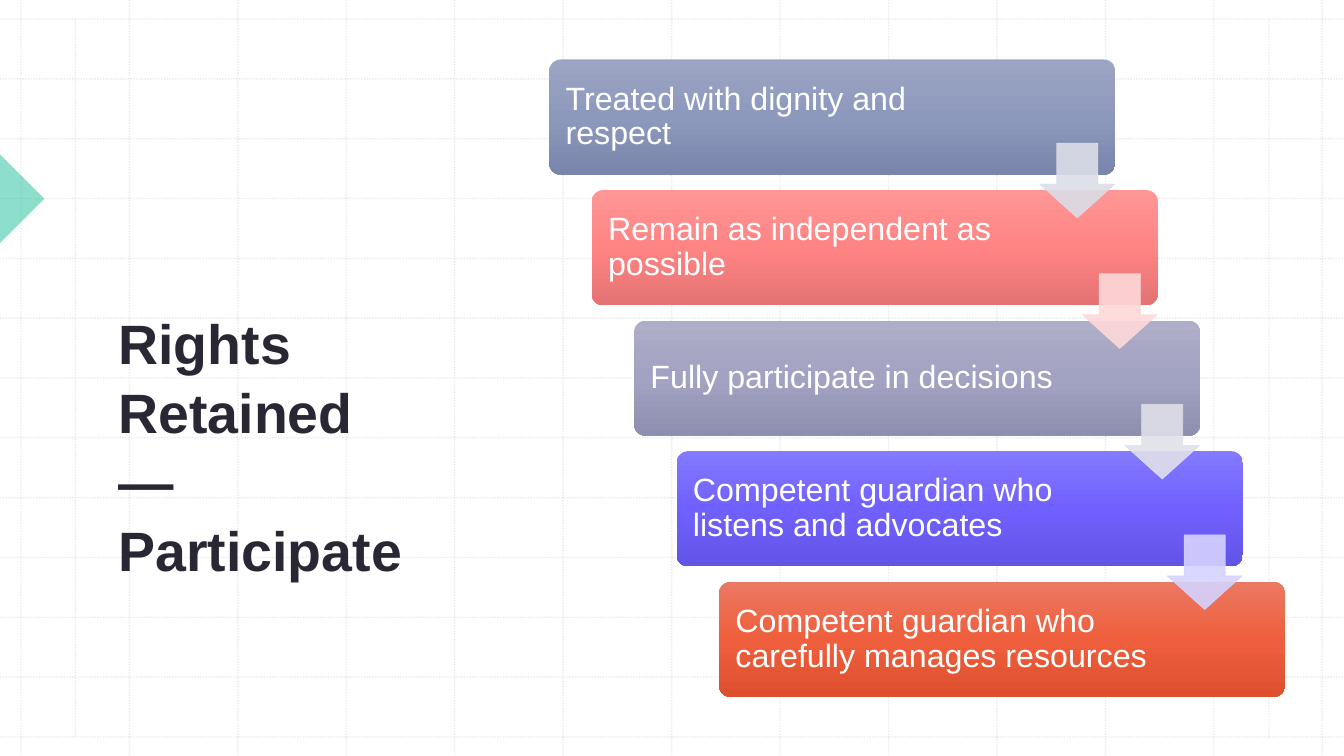
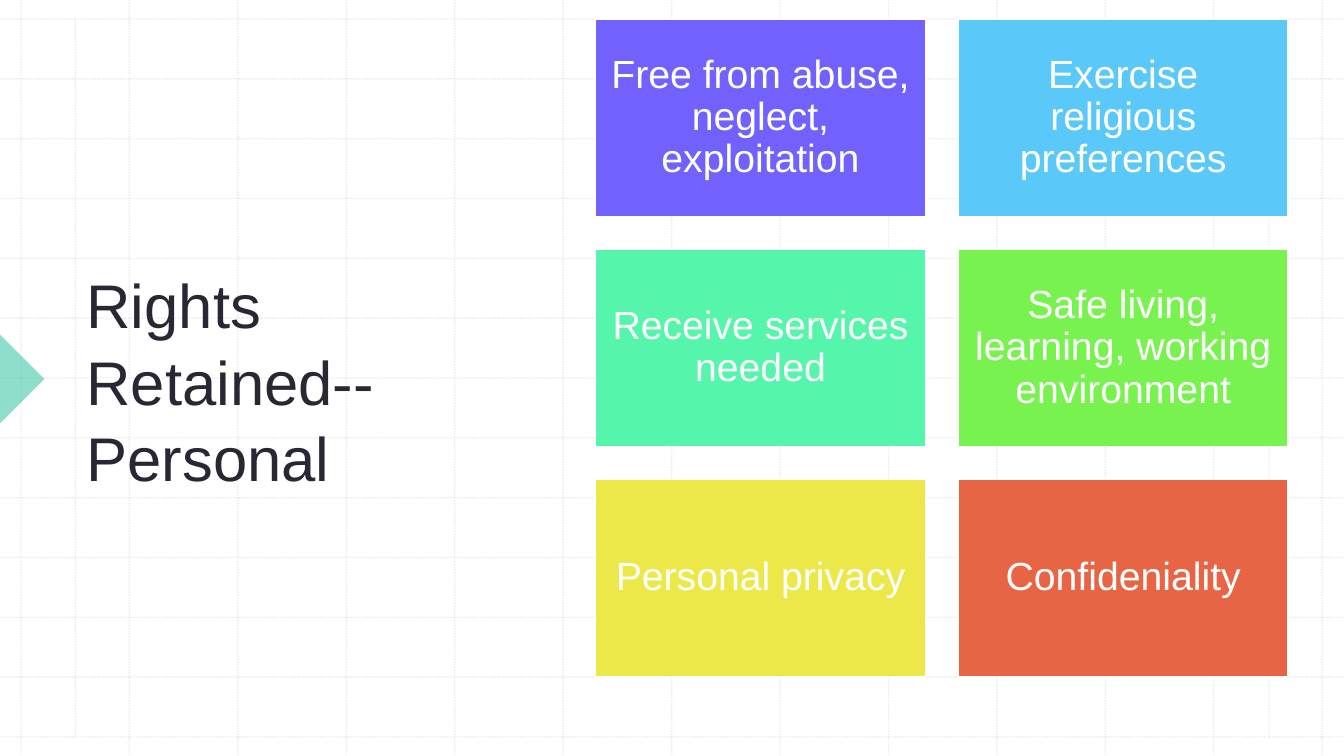
"""Build two slides on retained rights: a staircase of bars and a grid of tiles."""
from copy import deepcopy
from typing import NamedTuple

from pptx import Presentation
from pptx.dml.color import RGBColor as Rgb
from pptx.enum.dml import MSO_LINE as Dash
from pptx.enum.shapes import MSO_CONNECTOR as Wire, MSO_SHAPE as Kind
from pptx.enum.text import MSO_ANCHOR as Anchor, PP_ALIGN as Align
from pptx.oxml.ns import qn
from pptx.oxml.xmlchemy import OxmlElement as Node
from pptx.shapes.autoshape import Shape
from pptx.slide import Slide
from pptx.util import Cm, Pt

WIDE, HIGH = 33.87, 19.05
FONT = "Arial"
HUES = {
    "white": "FFFFFF", "ink": "2A2735", "grid": "BCBCBC", "mark": "1EBE9B",
    "violet": "7162FE", "sky": "5BC8FA", "mint": "55F6AB",
    "lime": "77F24F", "lemon": "ECE84A", "coral": "E76445",
}


class Box(NamedTuple):
    left: float
    top: float
    width: float
    height: float


class Step(NamedTuple):
    text: str
    shades: tuple[str, str, str]
    arrow: str = ""


class Tile(NamedTuple):
    text: str
    hue: str


STEPS = (
    Step("Treated with dignity and respect", ("9CA5C3", "8D98BD", "7A85AB"), "DBDEE7"),
    Step("Remain as independent as possible", ("FF9696", "FF8484", "E57373"), "FED9D9"),
    Step("Fully participate in decisions", ("AEAEC8", "A2A2C2", "8E8EAF"), "E0E0E9"),
    Step("Competent guardian who listens and advocates",
         ("8479FF", "7061FF", "6254E5"), "D5D3FF"),
    Step("Competent guardian who carefully manages resources",
         ("EB7862", "EF5F3D", "DE4F2D")),
)
TILES = (
    Tile("Free from abuse, neglect, exploitation", "violet"),
    Tile("Exercise religious preferences", "sky"),
    Tile("Receive services needed", "mint"),
    Tile("Safe living, learning, working environment", "lime"),
    Tile("Personal privacy", "lemon"),
    Tile("Confideniality", "coral"),
)


def rgb(code: str) -> Rgb:
    return Rgb.from_string(code)


def place(box: Box) -> tuple[Cm, ...]:
    return tuple(Cm(side) for side in box)


def fade(item, part: int) -> None:
    for hue in item._element.spPr.iter(qn("a:srgbClr")):
        alpha = Node("a:alpha")
        alpha.set("val", str(part * 1000))
        hue.append(alpha)


def add_form(slide: Slide, kind: Kind, box: Box, fill: str = "", edge: str = "",
             thick: float = 1) -> Shape:
    form = slide.shapes.add_shape(kind, *place(box))
    form.shadow.inherit = False
    if fill:
        form.fill.solid()
        form.fill.fore_color.rgb = rgb(fill)
    if edge:
        form.line.color.rgb = rgb(edge)
        form.line.width = Pt(thick)
    else:
        form.line.fill.background()
    return form


def shade(form: Shape, codes: tuple[str, str, str]) -> None:
    form.fill.gradient()
    form.fill.gradient_angle = 270
    stops = form._element.spPr.find(qn("a:gradFill")).find(qn("a:gsLst"))
    stops.append(deepcopy(stops[-1]))
    for spot, (stop, code) in enumerate(zip(form.fill.gradient_stops, codes)):
        stop.position = spot / 2
        stop.color.rgb = rgb(code)


def write(form: Shape, lines: tuple[str, ...], size: float, hue: str,
          align: Align = Align.LEFT, space: float = 0.9, bold: bool = False,
          pads: tuple[float, float] = (0.3, 0.3)) -> None:
    frame = form.text_frame
    frame.word_wrap = True
    frame.vertical_anchor = Anchor.MIDDLE
    frame.margin_left, frame.margin_right = map(Cm, pads)
    para = frame.paragraphs[0]
    para.alignment = align
    para.line_spacing = space
    for row, line in enumerate(lines):
        if row:
            para.add_line_break()
        run = para.add_run()
        run.text = line
        run.font.name = FONT
        run.font.size = Pt(size)
        run.font.bold = bold
        run.font.color.rgb = rgb(HUES[hue])


def add_rule(slide: Slide, x1: float, y1: float, x2: float, y2: float) -> None:
    rule = slide.shapes.add_connector(Wire.STRAIGHT, Cm(x1), Cm(y1), Cm(x2), Cm(y2))
    rule.line.color.rgb = rgb(HUES["grid"])
    rule.line.width = Pt(1)
    rule.line.dash_style = Dash.ROUND_DOT
    fade(rule, 30)
    rule._element.spPr.append(Node("a:effectLst"))


def add_base(deck: Presentation, mark: float) -> Slide:
    slide = deck.slides.add_slide(deck.slide_layouts[6])
    left, right, top, low, gaps = 0.53, 33.32, 0.48, 18.57, 12
    for step in range(gaps + 1):
        x = left + step * (right - left) / gaps
        y = top + step * (low - top) / gaps
        add_rule(slide, x, 0, x, HIGH)
        add_rule(slide, 0, y, WIDE, y)
    for x in (1.9, 31.98):
        add_rule(slide, x, top, x, low)
    wedge = add_form(slide, Kind.RIGHT_TRIANGLE, Box(-0.79, mark, 1.58, 1.58), HUES["mark"])
    wedge.rotation = 225
    fade(wedge, 50)
    return slide


def add_title(slide: Slide, box: Box, lines: tuple[str, ...], size: float,
              bold: bool = False) -> None:
    title = slide.shapes.add_textbox(*place(box))
    write(title, lines, size, "ink", space=1.04, bold=bold, pads=(0.25, 0.25))


def add_stairs(slide: Slide) -> None:
    spots = [(13.84 + 1.07 * row, 1.5 + 3.29 * row) for row in range(len(STEPS))]
    for step, (x, y) in zip(STEPS, spots):
        bar = add_form(slide, Kind.ROUNDED_RECTANGLE, Box(x, y, 14.27, 2.9))
        bar.adjustments[0] = 0.1
        shade(bar, step.shades)
        write(bar, (step.text,), 23, "white", pads=(0.33, 3.3))
    for step, (x, y) in zip(STEPS, spots):
        if step.arrow:
            box = Box(x + 12.37, y + 2.11, 1.88, 1.88)
            arrow = add_form(slide, Kind.DOWN_ARROW, box, step.arrow, step.arrow, 0.5)
            arrow.adjustments[0], arrow.adjustments[1] = 0.55, 0.45
            fade(arrow, 90)


def add_tiles(slide: Slide) -> None:
    for spot, tile in enumerate(TILES):
        row, col = divmod(spot, 2)
        box = Box(15.01 + 9.14 * col, 0.48 + 5.8 * row, 8.31, 4.98)
        form = add_form(slide, Kind.RECTANGLE, box, HUES[tile.hue], HUES["white"])
        write(form, (tile.text,), 28, "white", Align.CENTER)


def main() -> None:
    deck = Presentation()
    deck.slide_width, deck.slide_height = Cm(WIDE), Cm(HIGH)
    first = add_base(deck, 4.22)
    add_title(first, Box(2.74, 7.7, 7.75, 7), ("Rights Retained—", "Participate"), 39.6, True)
    add_stairs(first)
    second = add_base(deck, 8.76)
    add_title(second, Box(1.93, 2, 9.53, 15.1), ("Rights Retained--Personal",), 44)
    add_tiles(second)
    deck.save("out.pptx")


if __name__ == "__main__":
    main()
